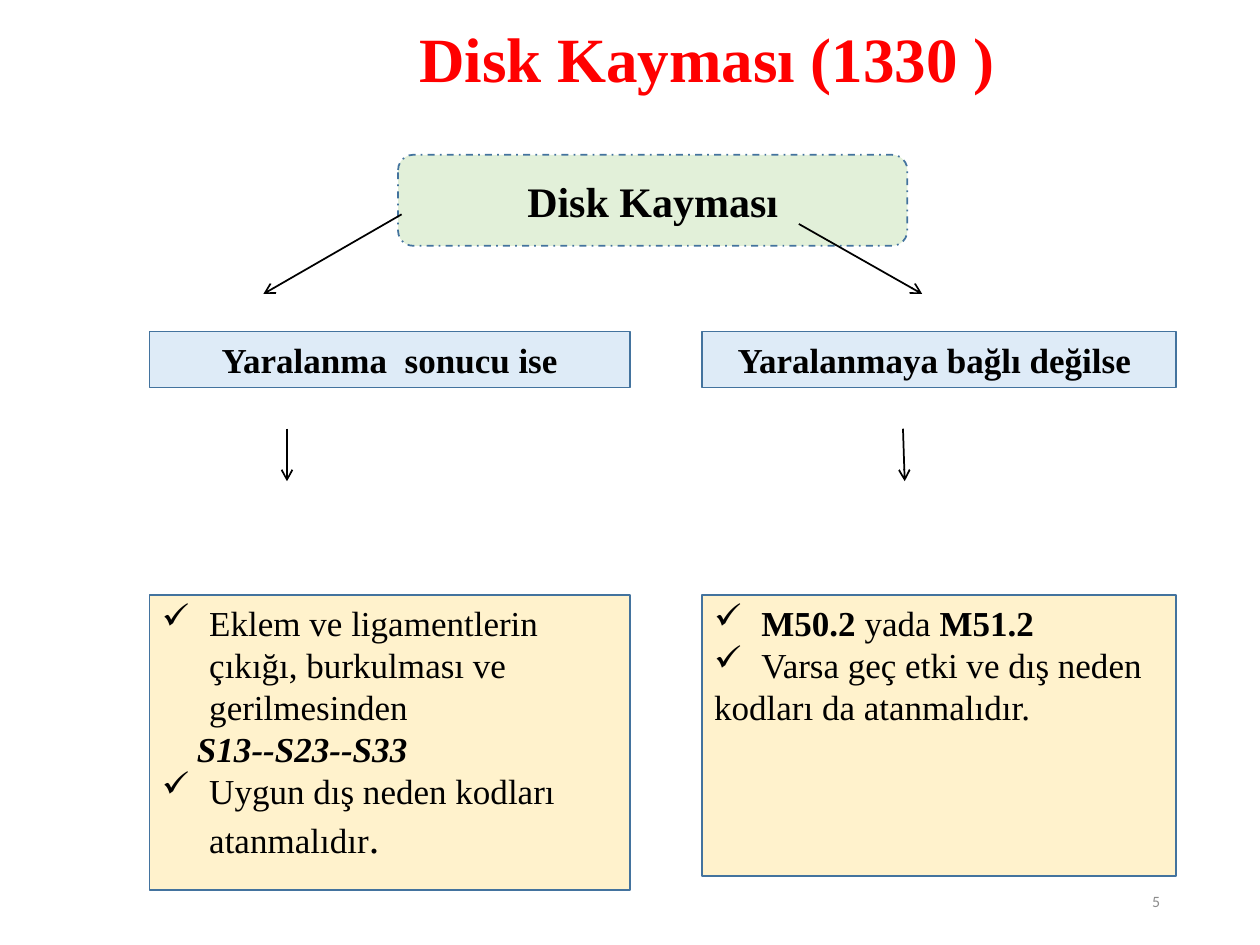
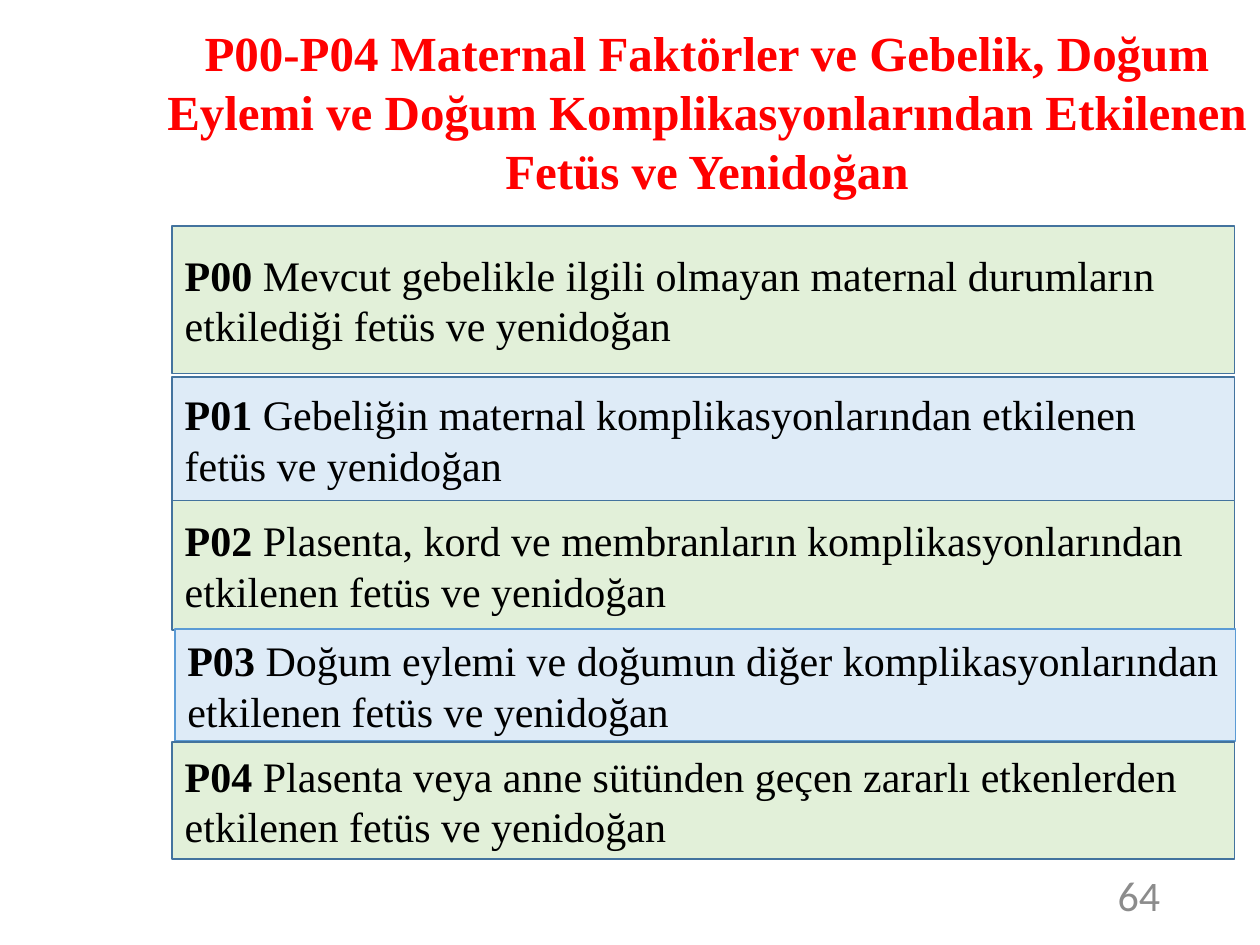
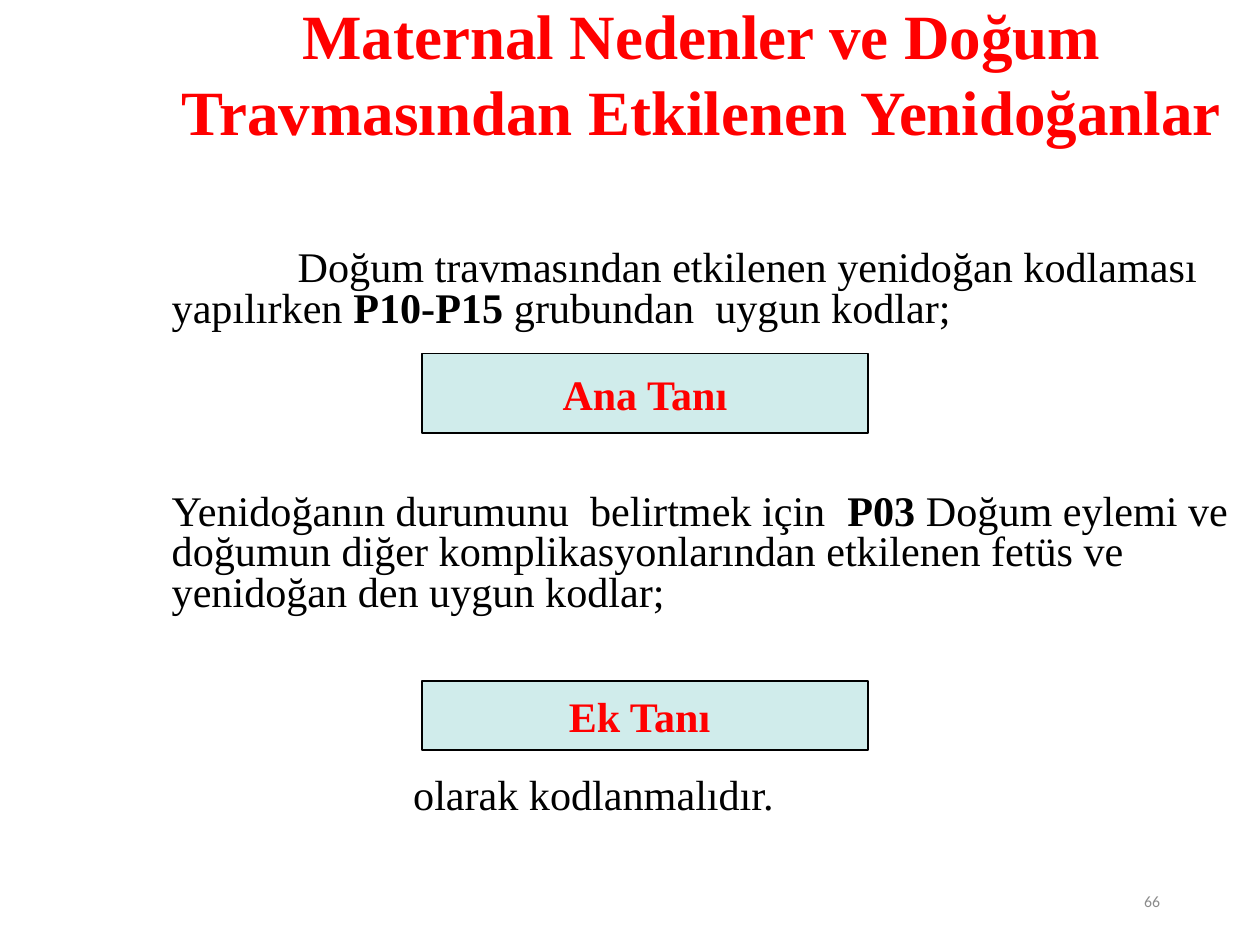
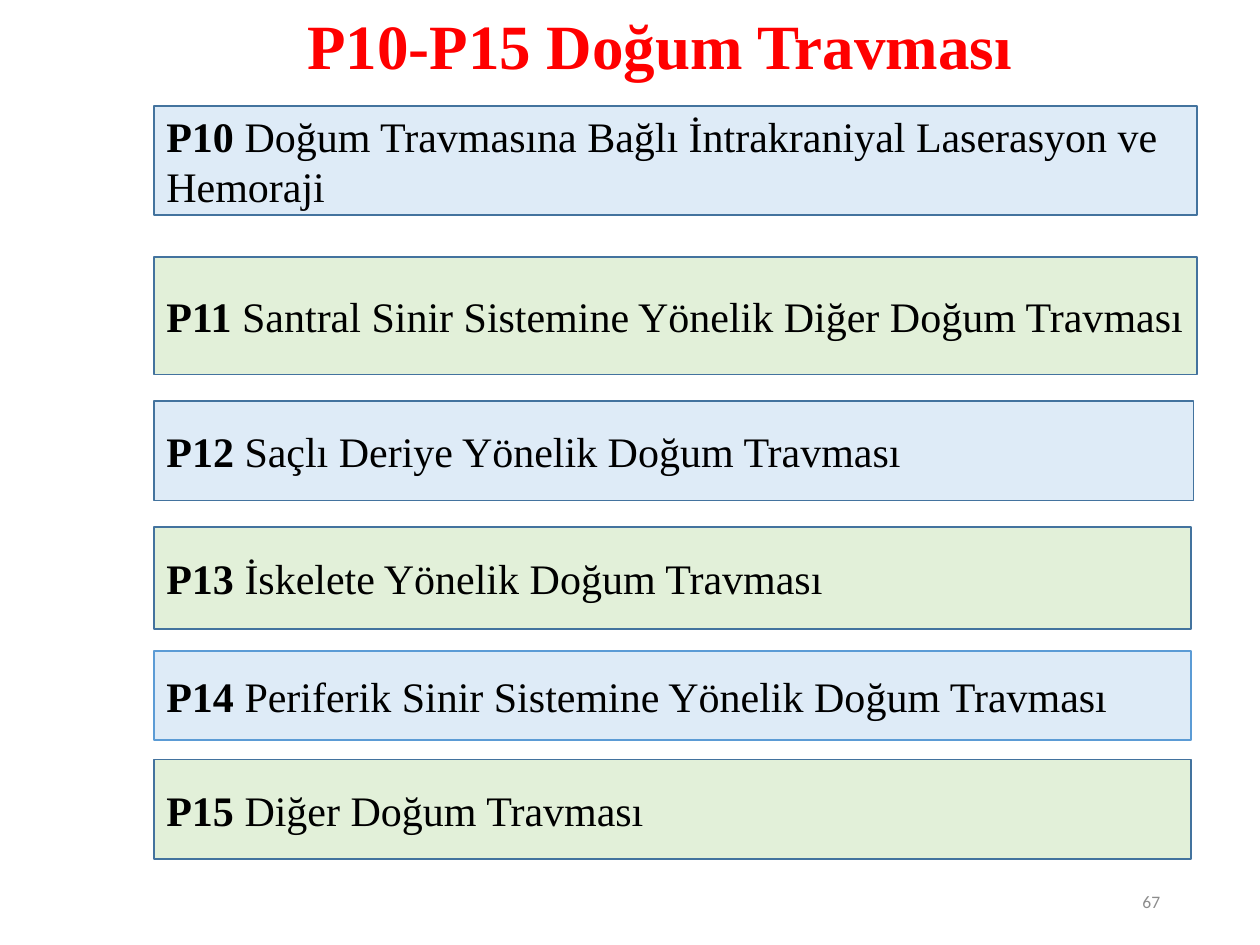
from lxml.etree import SubElement
from pptx import Presentation
from pptx.dml.color import RGBColor
from pptx.enum.dml import MSO_LINE
from pptx.enum.shapes import MSO_CONNECTOR, MSO_SHAPE
from pptx.enum.text import MSO_ANCHOR as ANCHOR, PP_ALIGN as ALIGN
from pptx.oxml.ns import qn
from pptx.util import Pt

# Shared style
SERIF, SANS = "Times New Roman", "Calibri"
BLACK, RED, GRAY = "000000", "FF0000", "8C8C8C"
GREEN, BLUE, YELLOW, TEAL = "E2F0D9", "DEEBF7", "FFF2CC", "D0ECEB"
EDGE, BRIGHT_EDGE = "43739E", "5B9BD5"
B, BI = {"bold": True}, {"bold": True, "italic": True}

# Slide 1: a paragraph is its runs and its layout; boxes are x, y, w, h
HANGING = {"bullet": "✓", "left": 27, "first": -27}
TABBED = {"bullet": "✓", "tab": 27}
ROOT = ("Disk Kayması", (227.5, 88.5, 291, 52))
BRANCHES = [
    {"x": 85.5, "w": 274.5, "h": 168.5, "head": "Yaralanma  sonucu ise",
     "paras": [
         ([("Eklem ve ligamentlerin çıkığı, burkulması ve gerilmesinden", {})], HANGING),
         ([("S13--S23--S33", BI)], {"left": 20}),
         ([("Uygun dış neden kodları  atanmalıdır", {}), (".", {"size": 24})], HANGING)]},
    {"x": 401, "w": 271, "h": 160.5, "head": "Yaralanmaya bağlı değilse ",
     "paras": [
         ([("\tM50.2 ", B), ("yada", {}), (" M51.2", B)], TABBED),
         ([("\tVarsa geç etki ve dış neden kodları da atanmalıdır.", {})], TABBED)]},
]
ARROWS = [(229.5, 122.5, 150.5, 168), (456.5, 128, 527, 168),
          (164, 245, 164, 275), (516, 245, 517, 275)]

# Slides 2 and 4: code, text, box
MATERNAL_TITLE = ("P00-P04 Maternal Faktörler ve Gebelik, Doğum Eylemi ve Doğum "
                  "Komplikasyonlarından Etkilenen Fetüs ve Yenidoğan")
MATERNAL = [
    ("P00", "Mevcut gebelikle ilgili olmayan maternal durumların etkilediği fetüs ve yenidoğan",
     (98.5, 129, 607, 84.5)),
    ("P01", "Gebeliğin maternal komplikasyonlarından etkilenen fetüs ve yenidoğan",
     (98.5, 215.5, 607, 71)),
    ("P02", "Plasenta, kord ve membranların komplikasyonlarından etkilenen fetüs ve yenidoğan",
     (98.5, 286, 607, 74)),
    ("P03", "Doğum eylemi ve doğumun diğer komplikasyonlarından etkilenen fetüs ve yenidoğan",
     (100, 359.5, 606, 64)),
    ("P04", "Plasenta veya anne sütünden geçen zararlı etkenlerden etkilenen fetüs ve yenidoğan",
     (98.5, 424, 607, 67)),
]
TRAUMA = [
    ("P10", "Doğum Travmasına Bağlı İntrakraniyal Laserasyon ve Hemoraji", (88, 60.5, 596, 62.5)),
    ("P11", "Santral Sinir Sistemine Yönelik Diğer Doğum Travması", (88, 147, 596, 67)),
    ("P12", "Saçlı Deriye Yönelik Doğum Travması", (88, 229, 594, 57)),
    ("P13", "İskelete Yönelik Doğum Travması", (88, 301, 592.5, 58.5)),
    ("P14", "Periferik Sinir Sistemine Yönelik Doğum Travması", (88, 372, 592.5, 51)),
    ("P15", "Diğer Doğum Travması", (88, 434, 592.5, 57)),
]
BRIGHT_EDGED = {"P03", "P14"}

# Slide 3
NEWBORN_TITLE = "Maternal Nedenler ve Doğum Travmasından Etkilenen Yenidoğanlar"
NEWBORN = [
    ([("Doğum travmasından etkilenen yenidoğan kodlaması yapılırken ", {}),
      ("P10-P15 ", B), ("grubundan  uygun kodlar;", {})], {"left": 9, "first": 72}),
    ([("Yenidoğanın durumunu  belirtmek için  ", {}), ("P03 ", B),
      ("Doğum eylemi ve doğumun diğer komplikasyonlarından etkilenen fetüs ve "
       "yenidoğan den uygun kodlar;", {})], {"left": 9, "before": 93}),
    ([("olarak kodlanmalıdır.", {})], {"left": 147, "before": 93}),
]
DIAGNOSES = [("Ana Tanı", (241, 202, 255, 45.5)), ("Ek Tanı ", (241, 389, 255, 39.5))]


def rgb(color):
    return RGBColor.from_string(color)


def lay_out(p, bullet=None, tab=None, left=0, first=0, before=0):
    pPr = p._p.get_or_add_pPr()
    pPr.set("marL", str(Pt(left)))
    pPr.set("indent", str(Pt(first)))
    if bullet:
        SubElement(pPr, qn("a:buChar"), char=bullet)
    if tab:
        tabs = SubElement(pPr, qn("a:tabLst"))
        SubElement(tabs, qn("a:tab"), pos=str(Pt(tab)), algn="l")
    if before:
        p.space_before = Pt(before)


def write(s, content, size=24, color=BLACK, font=SERIF, bold=False,
          align=ALIGN.LEFT, anchor=ANCHOR.MIDDLE, spacing=None):
    """Fill a shape with a string or a list of (runs, layout) paragraphs."""
    tf = s.text_frame
    tf.word_wrap = True
    tf.vertical_anchor = anchor
    paras = [([(content, {})], {})] if isinstance(content, str) else content
    for i, (runs, layout) in enumerate(paras):
        p = tf.add_paragraph() if i else tf.paragraphs[0]
        lay_out(p, **layout)
        p.alignment = align
        if spacing:
            p.line_spacing = spacing
        for text, style in runs:
            r = p.add_run()
            r.text = text
            r.font.name = font
            r.font.size = Pt(style.get("size", size))
            r.font.bold = style.get("bold", bold)
            r.font.italic = style.get("italic", False)
            r.font.color.rgb = rgb(color)


def text_box(slide, box, content, **fmt):
    s = slide.shapes.add_textbox(*map(Pt, box))
    write(s, content, **fmt)


def panel(slide, box, content, fill, edge=EDGE, kind=MSO_SHAPE.RECTANGLE, dash=None, **fmt):
    s = slide.shapes.add_shape(kind, *map(Pt, box))
    s.shadow.inherit = False
    s.fill.solid()
    s.fill.fore_color.rgb = rgb(fill)
    s.line.color.rgb = rgb(edge)
    s.line.width = Pt(1)
    if dash:
        s.line.dash_style = dash
    write(s, content, **fmt)


def arrow(slide, ends):
    s = slide.shapes.add_connector(MSO_CONNECTOR.STRAIGHT, *map(Pt, ends))
    s.line.color.rgb = rgb(BLACK)
    s.line.width = Pt(1)
    SubElement(s.line._get_or_add_ln(), qn("a:tailEnd"), type="arrow")
    SubElement(s._element.spPr, qn("a:effectLst"))


def new_slide(prs, title, box, number, title_fmt, number_size=9, number_box=(508, 500.5, 162, 29)):
    slide = prs.slides.add_slide(prs.slide_layouts[6])
    text_box(slide, box, title, **{"size": 36, "color": RED, "bold": True,
                                   "align": ALIGN.CENTER, **title_fmt})
    text_box(slide, number_box, str(number), size=number_size, color=GRAY,
             font=SANS, align=ALIGN.RIGHT)
    return slide


def code_bars(slide, rows, fills):
    for i, (code, text, box) in enumerate(rows):
        panel(slide, box, [([(code + " ", B), (text, {})], {})], fills[i % 2],
              edge=BRIGHT_EDGE if code in BRIGHT_EDGED else EDGE)


def main():
    prs = Presentation()
    prs.slide_width, prs.slide_height = Pt(720), Pt(540)

    # Slide 1: decision tree
    slide = new_slide(prs, "Disk Kayması (1330 )", (88, 0, 632, 70.5), 5, {"spacing": 0.9})
    panel(slide, ROOT[1], ROOT[0], GREEN, kind=MSO_SHAPE.ROUNDED_RECTANGLE,
          dash=MSO_LINE.DASH_DOT, bold=True, align=ALIGN.CENTER)
    for branch in BRANCHES:
        x, w = branch["x"], branch["w"]
        panel(slide, (x, 189.5, w, 32), branch["head"], BLUE,
              size=20, bold=True, align=ALIGN.CENTER)
        panel(slide, (x, 340, w, branch["h"]), branch["paras"], YELLOW,
              size=20, anchor=ANCHOR.TOP)
    for ends in ARROWS:
        arrow(slide, ends)

    # Slide 2: maternal codes
    slide = new_slide(prs, MATERNAL_TITLE, (88, 9.5, 632, 108.5), 64,
                      {"size": 28, "anchor": ANCHOR.TOP},
                      number_size=24, number_box=(512.5, 493, 157.5, 36))
    code_bars(slide, MATERNAL, (GREEN, BLUE))

    # Slide 3: main and additional diagnosis
    slide = new_slide(prs, NEWBORN_TITLE, (82, 0, 638, 83), 66, {})
    text_box(slide, (82, 139.5, 638, 363), NEWBORN, size=24.1,
             anchor=ANCHOR.TOP, spacing=0.8)
    for label, box in DIAGNOSES:
        panel(slide, box, label, TEAL, edge=BLACK, color=RED, bold=True, align=ALIGN.CENTER)

    # Slide 4: birth trauma codes
    slide = new_slide(prs, "P10-P15 Doğum Travması", (127.5, 0, 499, 51), 67,
                      {"anchor": ANCHOR.TOP}, number_size=10,
                      number_box=(638, 500.5, 32, 29))
    code_bars(slide, TRAUMA, (BLUE, GREEN))

    prs.save("out.pptx")


if __name__ == "__main__":
    main()
